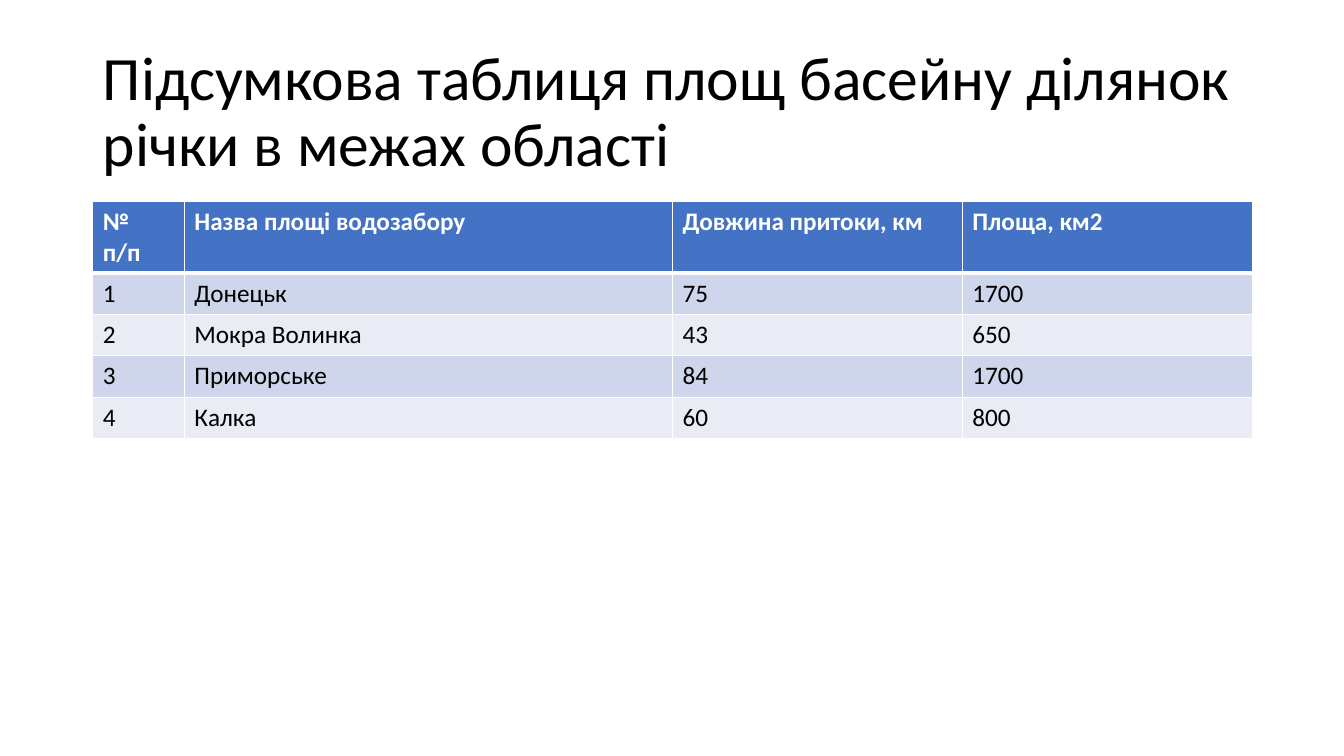
from lxml import etree
from pptx import Presentation
from pptx.dml.color import RGBColor
from pptx.enum.text import MSO_ANCHOR, MSO_AUTO_SIZE, PP_ALIGN
from pptx.oxml.ns import qn
from pptx.util import Inches, Pt

LEFT, MIDDLE, NO_FIT = PP_ALIGN.LEFT, MSO_ANCHOR.MIDDLE, MSO_AUTO_SIZE.NONE
FONT = "Calibri"
WHITE, BLACK, HEADER = "FFFFFF", "000000", "4472C4"
BANDS = ("CFD5EA", "E9EBF5")
MARGIN, CONTENT_W = 0.92, 11.5
COL_SHARES = (0.079, 0.421, 0.25, 0.25)
HEADER_H, ROW_H = 0.7, 0.41
TITLE = "Підсумкова таблиця площ басейну ділянок річки в межах області"
ROWS = (
    ("№\nп/п", "Назва площі водозабору", "Довжина притоки, км", "Площа, км2"),
    ("1", "Донецьк", "75", "1700"),
    ("2", "Мокра Волинка", "43", "650"),
    ("3", "Приморське", "84", "1700"),
    ("4", "Калка", "60", "800"),
)


def rgb(value):
    """Turn a hex string into a colour."""
    return RGBColor.from_string(value)


def format_text(tf, size, color, bold=False):
    """Format every run of a text frame."""
    for p in tf.paragraphs:
        p.alignment = LEFT
        for r in p.runs:
            r.font.name = FONT
            r.font.size = Pt(size)
            r.font.bold = bold
            r.font.color.rgb = rgb(color)


def set_borders(cell, color, **widths):
    """Draw cell borders with widths in points, keyed by side."""
    tc_pr = cell._tc.get_or_add_tcPr()
    for i, side in enumerate("LRTB"):
        ln = etree.Element(qn(f"a:ln{side}"), w=str(Pt(widths.get(side, 1))))
        fill = etree.SubElement(ln, qn("a:solidFill"))
        etree.SubElement(fill, qn("a:srgbClr"), val=color)
        tc_pr.insert(i, ln)


def add_title(s, text):
    """Place and format the title placeholder."""
    sp = s.shapes.title
    sp.left, sp.top = Inches(MARGIN), Inches(0.4)
    sp.width, sp.height = Inches(CONTENT_W), Inches(1.45)
    tf = sp.text_frame
    tf.text = text
    tf.word_wrap = True
    tf.auto_size = NO_FIT
    tf.vertical_anchor = MIDDLE
    tf.paragraphs[0].line_spacing = 0.9
    format_text(tf, 44, BLACK)


def add_banded_table(s, rows, top):
    """Add a table with a header row and alternating row fills."""
    height = HEADER_H + ROW_H * (len(rows) - 1)
    table = s.shapes.add_table(
        len(rows), len(COL_SHARES), Inches(MARGIN), Inches(top),
        Inches(CONTENT_W), Inches(height)).table
    for col, share in zip(table.columns, COL_SHARES):
        col.width = Inches(CONTENT_W * share)
    for i, values in enumerate(rows):
        head = i == 0
        table.rows[i].height = Inches(HEADER_H if head else ROW_H)
        for j, value in enumerate(values):
            cell = table.cell(i, j)
            cell.text_frame.text = value
            format_text(cell.text_frame, 18, WHITE if head else BLACK, head)
            set_borders(cell, WHITE, T=3 if i == 1 else 1, B=3 if head else 1)
            cell.fill.solid()
            cell.fill.fore_color.rgb = rgb(HEADER if head else BANDS[(i - 1) % 2])


def main():
    """Build the slide and save it."""
    prs = Presentation()
    prs.slide_width, prs.slide_height = Inches(13.33), Inches(7.5)
    s = prs.slides.add_slide(prs.slide_layouts[5])
    add_title(s, TITLE)
    add_banded_table(s, ROWS, top=2)
    prs.save("out.pptx")


if __name__ == "__main__":
    main()
